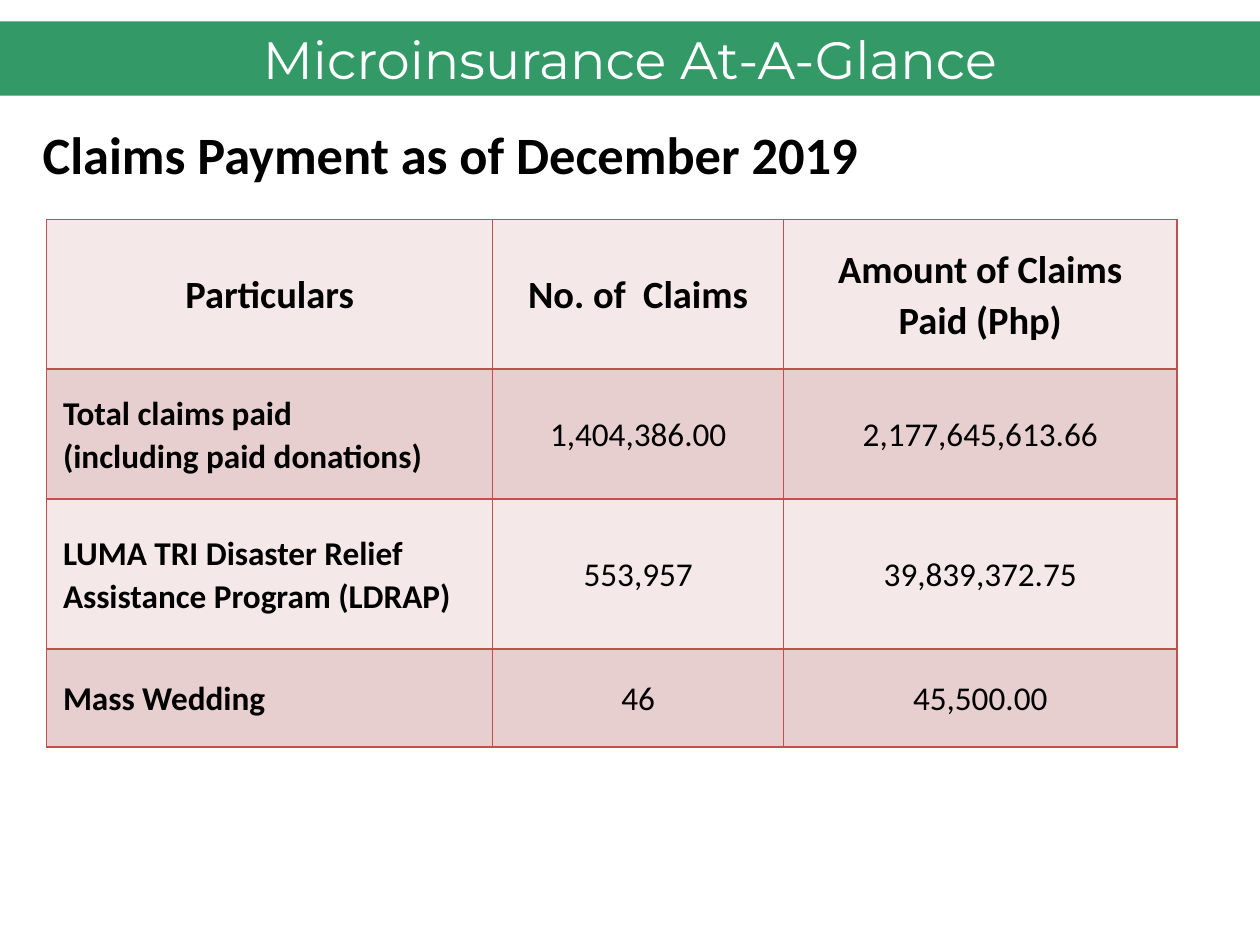
from lxml.etree import SubElement
from pptx import Presentation
from pptx.dml.color import RGBColor
from pptx.enum.shapes import MSO_SHAPE
from pptx.enum.text import MSO_ANCHOR, PP_ALIGN
from pptx.oxml.ns import qn
from pptx.util import Inches, Pt

COLORS = {"band": "339966", "light": "F4E8E8", "dark": "E8CFCF",
          "border": "C0504D", "text": "000000", "white": "FFFFFF"}
FORMATS = {
    "title": {"name": "Montserrat", "size": Pt(30), "bold": False},
    "heading": {"name": "Calibri", "size": Pt(30), "bold": True},
    "header": {"name": "Calibri", "size": Pt(22), "bold": True},
    "label": {"name": "Calibri", "size": Pt(19), "bold": True},
    "value": {"name": "Calibri", "size": Pt(19), "bold": False},
}
WIDTH, HEIGHT = Inches(10), Inches(7.5)
COLUMNS = (3.54, 2.31, 3.12)
ROWS = (1.19, 1.03, 1.19, 0.78)
CLAIMS = (
    ("Particulars", "No. of  Claims", "Amount of Claims Paid (Php)"),
    ("Total claims paid\n(including paid donations)", "1,404,386.00", "2,177,645,613.66"),
    ("LUMA TRI Disaster Relief Assistance Program (LDRAP)", "553,957", "39,839,372.75"),
    ("Mass Wedding", "46", "45,500.00"),
)


def rgb(key):
    """Return the named colour."""
    return RGBColor.from_string(COLORS[key])


def share(left, top, width, height):
    """Turn shares of the slide's size into a box."""
    return (int(WIDTH * left), int(HEIGHT * top),
            int(WIDTH * width), int(HEIGHT * height))


def write(tf, text, style, align, color="text", spacing=None):
    """Write one styled paragraph into a text frame."""
    tf.word_wrap = True
    p = tf.paragraphs[0]
    p.text = text
    p.alignment = align
    p.line_spacing = spacing
    for r in p.runs:
        for name, value in FORMATS[style].items():
            setattr(r.font, name, value)
        r.font.color.rgb = rgb(color)


def add_border(cell):
    """Draw a thin line on every side of a cell."""
    props = cell._tc.get_or_add_tcPr()
    for i, side in enumerate(("lnL", "lnR", "lnT", "lnB")):
        ln = props.makeelement(qn(f"a:{side}"), {"w": str(Pt(1))})
        fill = SubElement(ln, qn("a:solidFill"))
        SubElement(fill, qn("a:srgbClr"), val=COLORS["border"])
        props.insert(i, ln)


def add_title(slide, box):
    """Place the title band."""
    sp = slide.shapes.add_shape(MSO_SHAPE.RECTANGLE, *box)
    sp.shadow.inherit = False
    sp.fill.solid()
    sp.fill.fore_color.rgb = rgb("band")
    sp.line.fill.background()
    sp.text_frame.vertical_anchor = MSO_ANCHOR.MIDDLE
    write(sp.text_frame, "Microinsurance At-A-Glance", "title", PP_ALIGN.CENTER, "white")


def add_heading(slide, box):
    """Place the heading above the table."""
    sp = slide.shapes.add_textbox(*box)
    write(sp.text_frame, "Claims Payment as of December 2019", "heading", PP_ALIGN.JUSTIFY)


def add_claims(slide, box):
    """Place the claims table, splitting the box by column and row weights."""
    table = slide.shapes.add_table(len(ROWS), len(COLUMNS), *box).table
    for column, weight in zip(table.columns, COLUMNS):
        column.width = int(box[2] * weight / sum(COLUMNS))
    for row, weight in zip(table.rows, ROWS):
        row.height = int(box[3] * weight / sum(ROWS))
    layout = {"vertical_anchor": MSO_ANCHOR.MIDDLE,
              "margin_left": Inches(0.13), "margin_right": Inches(0.13),
              "margin_top": 0, "margin_bottom": 0}
    for i, texts in enumerate(CLAIMS):
        for j, text in enumerate(texts):
            cell = table.cell(i, j)
            for name, value in layout.items():
                setattr(cell, name, value)
            cell.fill.solid()
            cell.fill.fore_color.rgb = rgb("dark" if i % 2 else "light")
            add_border(cell)
            style = "header" if i == 0 else "value" if j else "label"
            align = PP_ALIGN.LEFT if style == "label" else PP_ALIGN.CENTER
            write(cell.text_frame, text, style, align, spacing=1.07)


def main():
    """Build and save the slide."""
    prs = Presentation()
    prs.slide_width, prs.slide_height = WIDTH, HEIGHT
    slide = prs.slides.add_slide(prs.slide_layouts[6])
    add_title(slide, share(0, 0.17 / 7.5, 1, 0.59 / 7.5))
    add_heading(slide, share(0.024, 0.92 / 7.5, 0.86, 0.08))
    add_claims(slide, share(0.037, 1.74 / 7.5, 0.897, 4.19 / 7.5))
    prs.save("out.pptx")


if __name__ == "__main__":
    main()
